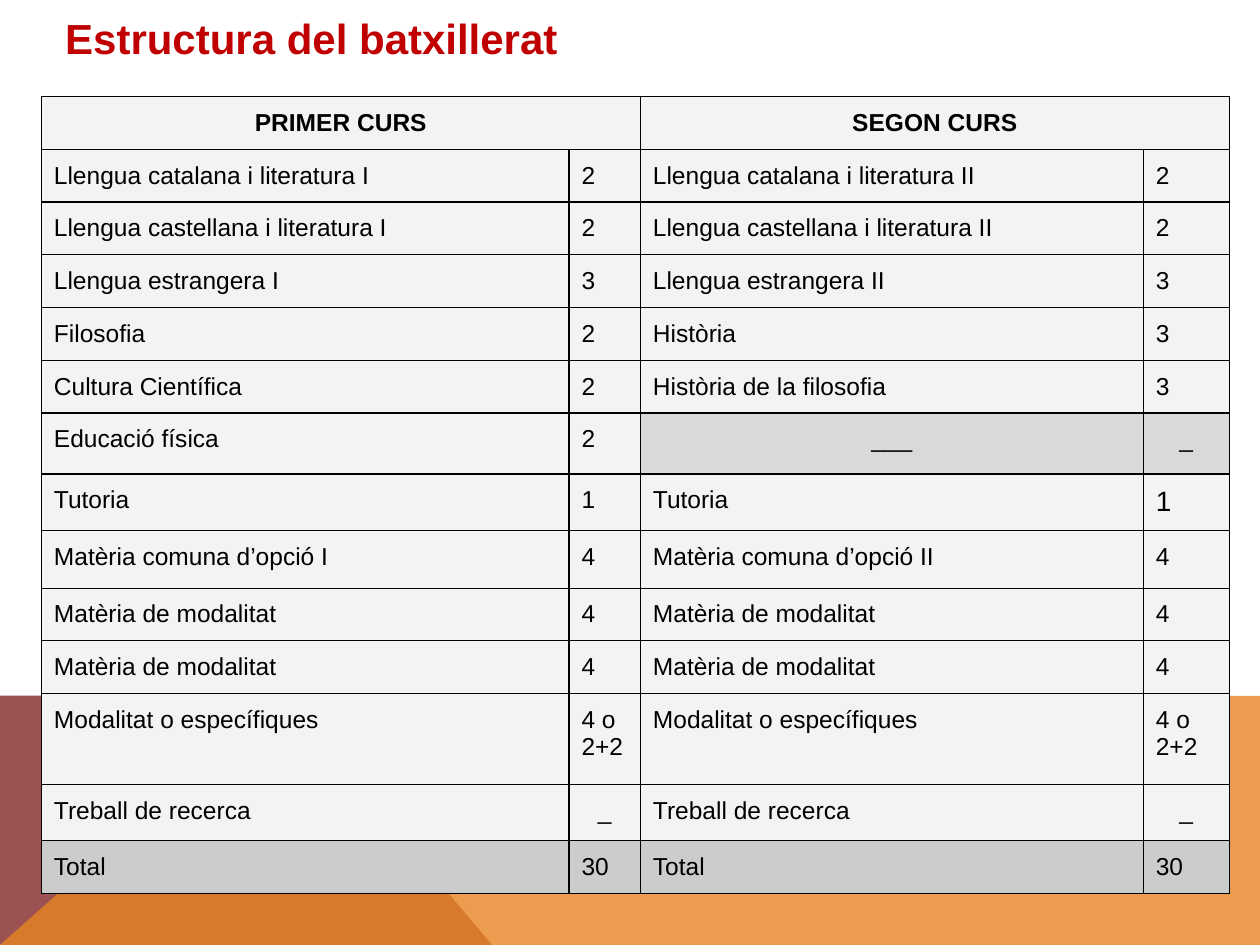
"""Build the slide with the weekly hours of the two batxillerat years."""
from lxml import etree
from pptx import Presentation
from pptx.dml.color import RGBColor
from pptx.enum.text import MSO_ANCHOR, PP_ALIGN
from pptx.oxml.ns import qn
from pptx.util import Pt

CENTER, LEFT = PP_ALIGN.CENTER, PP_ALIGN.LEFT
MIDDLE, TOP = MSO_ANCHOR.MIDDLE, MSO_ANCHOR.TOP
FONT = "Arial"
INSET = 7.2
CELL_BOTTOM_INSET = 4
COLORS = {
    "title": "C00000", "text": "000000", "border": "000000",
    "cell": "F3F3F3", "empty": "D9D9D9", "total": "CCCCCC",
    "maroon": "9C5252", "orange": "E68422",
}

TITLE = "Estructura del batxillerat"
HEADINGS = ("PRIMER CURS", "", "SEGON CURS", "")
SUBJECTS = [
    ("Llengua catalana i literatura I", "2", "Llengua catalana i literatura II", "2"),
    ("Llengua castellana i literatura I", "2", "Llengua castellana i literatura II", "2"),
    ("Llengua estrangera I", "3", "Llengua estrangera II", "3"),
    ("Filosofia", "2", "Història", "3"),
    ("Cultura Científica", "2", "Història de la filosofia", "3"),
    ("Educació física", "2", "___", "_"),
    ("Tutoria", "1", "Tutoria", "1"),
    ("Matèria comuna d’opció I", "4", "Matèria comuna d’opció II", "4"),
    ("Matèria de modalitat", "4", "Matèria de modalitat", "4"),
    ("Matèria de modalitat", "4", "Matèria de modalitat", "4"),
    ("Modalitat o específiques", "4 o 2+2", "Modalitat o específiques", "4 o 2+2"),
    ("Treball de recerca", "_", "Treball de recerca", "_"),
    ("Total", "30", "Total", "30"),
]
ROWS = [HEADINGS] + SUBJECTS
COLUMN_WIDTHS = (301.5, 40.8, 287.4, 49.2)
ROW_HEIGHT = 30.15
TALL_ROWS = {6: 34.9, 7: 32.2, 8: 33, 11: 52.2, 12: 32}
LARGE_CELL = (7, 3)
BANDS = [
    ("maroon", 100, [(0, 540), (0, 397.5), (160.5, 397.5), (281.25, 540)]),
    ("orange", 80, [(0, 540), (160.5, 397.5), (720, 397.7), (720, 540)]),
]


def rgb(name):
    return RGBColor.from_string(COLORS[name])


def add_band(slide, color, opacity, points):
    builder = slide.shapes.build_freeform(Pt(points[0][0]), Pt(points[0][1]))
    builder.add_line_segments([(Pt(x), Pt(y)) for x, y in points[1:]], close=True)
    shape = builder.convert_to_shape()
    shape.shadow.inherit = False
    shape.fill.solid()
    shape.fill.fore_color.rgb = rgb(color)
    shape.line.fill.background()
    if opacity < 100:
        fill_color = shape._element.spPr.find(qn("a:solidFill"))[0]
        etree.SubElement(fill_color, qn("a:alpha"), val=str(opacity * 1000))


def write_text(frame, text, size, color, bold=False, alignment=LEFT):
    frame.text = text
    paragraph = frame.paragraphs[0]
    paragraph.alignment = alignment
    for run in paragraph.runs:
        run.font.name, run.font.size, run.font.bold = FONT, Pt(size), bold
        run.font.color.rgb = rgb(color)


def set_margins(target, bottom=INSET):
    target.margin_left = target.margin_right = target.margin_top = Pt(INSET)
    target.margin_bottom = Pt(bottom)


def add_borders(cell):
    properties = cell._tc.get_or_add_tcPr()
    for position, side in enumerate(("lnL", "lnR", "lnT", "lnB")):
        line = etree.Element(qn(f"a:{side}"), w=str(Pt(0.75)))
        fill = etree.SubElement(line, qn("a:solidFill"))
        etree.SubElement(fill, qn("a:srgbClr"), val=COLORS["border"])
        properties.insert(position, line)


def add_title(slide):
    box = slide.shapes.add_textbox(Pt(30.2), Pt(-10.3), Pt(709.9), Pt(64))
    frame = box.text_frame
    frame.word_wrap = True
    frame.vertical_anchor = MIDDLE
    set_margins(frame)
    write_text(frame, TITLE, 24, "title", bold=True)


def cell_color(row, text):
    if row == len(ROWS) - 1:
        return "total"
    return "empty" if "___" in ROWS[row] and text.startswith("_") else "cell"


def add_timetable(slide):
    heights = [TALL_ROWS.get(row, ROW_HEIGHT) for row in range(len(ROWS))]
    table = slide.shapes.add_table(
        len(ROWS), len(COLUMN_WIDTHS), Pt(23.6), Pt(55.2),
        Pt(sum(COLUMN_WIDTHS)), Pt(sum(heights))).table
    for column, width in zip(table.columns, COLUMN_WIDTHS):
        column.width = Pt(width)
    for row, height in zip(table.rows, heights):
        row.height = Pt(height)
    for row, texts in enumerate(ROWS):
        for column, text in enumerate(texts):
            cell = table.cell(row, column)
            set_margins(cell, CELL_BOTTOM_INSET)
            cell.vertical_anchor = TOP
            cell.fill.solid()
            cell.fill.fore_color.rgb = rgb(cell_color(row, text))
            add_borders(cell)
            size = 16 if (row, column) == LARGE_CELL else 14
            centered = row == 0 or text.startswith("_")
            write_text(cell.text_frame, text, size, "text", row == 0,
                       CENTER if centered else LEFT)
    for column in (0, 2):
        table.cell(0, column).merge(table.cell(0, column + 1))


def main():
    presentation = Presentation()
    presentation.slide_width, presentation.slide_height = Pt(720), Pt(540)
    slide = presentation.slides.add_slide(presentation.slide_layouts[6])
    for color, opacity, points in BANDS:
        add_band(slide, color, opacity, points)
    add_title(slide)
    add_timetable(slide)
    presentation.save("out.pptx")


if __name__ == "__main__":
    main()
